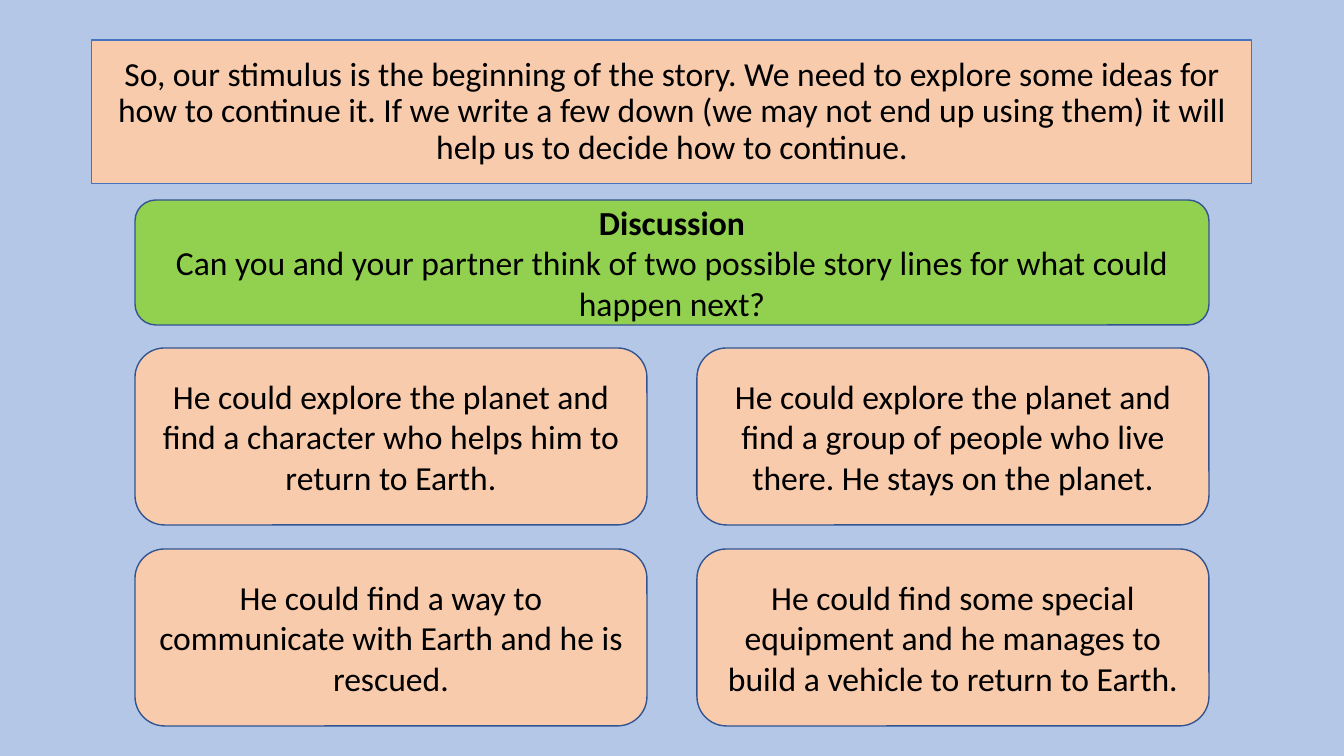
from pptx import Presentation
from pptx.dml.color import RGBColor
from pptx.enum.shapes import MSO_SHAPE
from pptx.enum.text import MSO_ANCHOR, PP_ALIGN
from pptx.util import Emu, Pt

RECTANGLE = MSO_SHAPE.RECTANGLE
ROUNDED = MSO_SHAPE.ROUNDED_RECTANGLE
MIDDLE = MSO_ANCHOR.MIDDLE
CENTER = PP_ALIGN.CENTER

SKY = RGBColor(0xB4, 0xC7, 0xE7)
PEACH = RGBColor(0xF8, 0xCB, 0xAD)
GREEN = RGBColor(0x92, 0xD0, 0x50)
BLUE = RGBColor(0x44, 0x72, 0xC4)
NAVY = RGBColor(0x32, 0x54, 0x91)
BLACK = RGBColor(0x00, 0x00, 0x00)

SLIDE_WIDTH, SLIDE_HEIGHT = 1344, 756
EMU_PER_PX = 12192000 / SLIDE_WIDTH

INTRODUCTION = (
    "So, our stimulus is the beginning of the story. We need to explore some ideas "
    "for how to continue it. If we write a few down (we may not end up using them) "
    "it will help us to decide how to continue."
)
QUESTION = (
    "Can you and your partner think of two possible story lines "
    "for what could happen next?"
)
STORY_IDEAS = [
    "He could explore the planet and find a character who helps him to return to Earth.",
    "He could explore the planet and find a group of people who live there. "
    "He stays on the planet.",
    "He could find a way to communicate with Earth and he is rescued.",
    "He could find some special equipment and he manages to build a vehicle "
    "to return to Earth.",
]
IDEA_LEFT, IDEA_TOP = 135, 348
IDEA_WIDTH, IDEA_HEIGHT = 512, 177
COLUMN_STEP, ROW_STEP = 562, 201


def px(length):
    return Emu(round(length * EMU_PER_PX))


class StorySlide:
    """Draws styled text boxes on one slide."""

    font_name = "Calibri"
    font_size = Pt(24)

    def __init__(self, presentation):
        self.slide = presentation.slides.add_slide(presentation.slide_layouts[6])
        background = self.slide.background.fill
        background.solid()
        background.fore_color.rgb = SKY

    def box(self, kind, left, top, width, height, fill, line, line_width, text):
        shape = self.slide.shapes.add_shape(
            kind, px(left), px(top), px(width), px(height)
        )
        shape.shadow.inherit = False
        shape.fill.solid()
        shape.fill.fore_color.rgb = fill
        shape.line.color.rgb = line
        shape.line.width = Pt(line_width)
        text_frame = shape.text_frame
        text_frame.word_wrap = True
        text_frame.vertical_anchor = MIDDLE
        text_frame.text = text
        for paragraph in text_frame.paragraphs:
            paragraph.alignment = CENTER
            for run in paragraph.runs:
                run.font.name = self.font_name
                run.font.size = self.font_size
                run.font.color.rgb = BLACK
        return shape

    def banner(self, left, top, width, height, text):
        shape = self.box(
            RECTANGLE, left, top, width, height, PEACH, BLUE, 0.75, text
        )
        shape.text_frame.paragraphs[0].line_spacing = 0.9

    def card(self, left, top, width, height, text, fill=PEACH):
        return self.box(ROUNDED, left, top, width, height, fill, NAVY, 1, text)

    def discussion(self, left, top, width, height, heading, question):
        shape = self.card(left, top, width, height, f"{heading}\n{question}", GREEN)
        shape.text_frame.paragraphs[0].runs[0].font.bold = True


def main():
    presentation = Presentation()
    presentation.slide_width = px(SLIDE_WIDTH)
    presentation.slide_height = px(SLIDE_HEIGHT)

    story = StorySlide(presentation)
    story.banner(92, 40, 1160, 144, INTRODUCTION)
    story.discussion(135, 200, 1074, 125, "Discussion", QUESTION)
    for index, idea in enumerate(STORY_IDEAS):
        row, column = divmod(index, 2)
        story.card(
            IDEA_LEFT + column * COLUMN_STEP,
            IDEA_TOP + row * ROW_STEP,
            IDEA_WIDTH,
            IDEA_HEIGHT,
            idea,
        )

    presentation.save("out.pptx")


if __name__ == "__main__":
    main()
